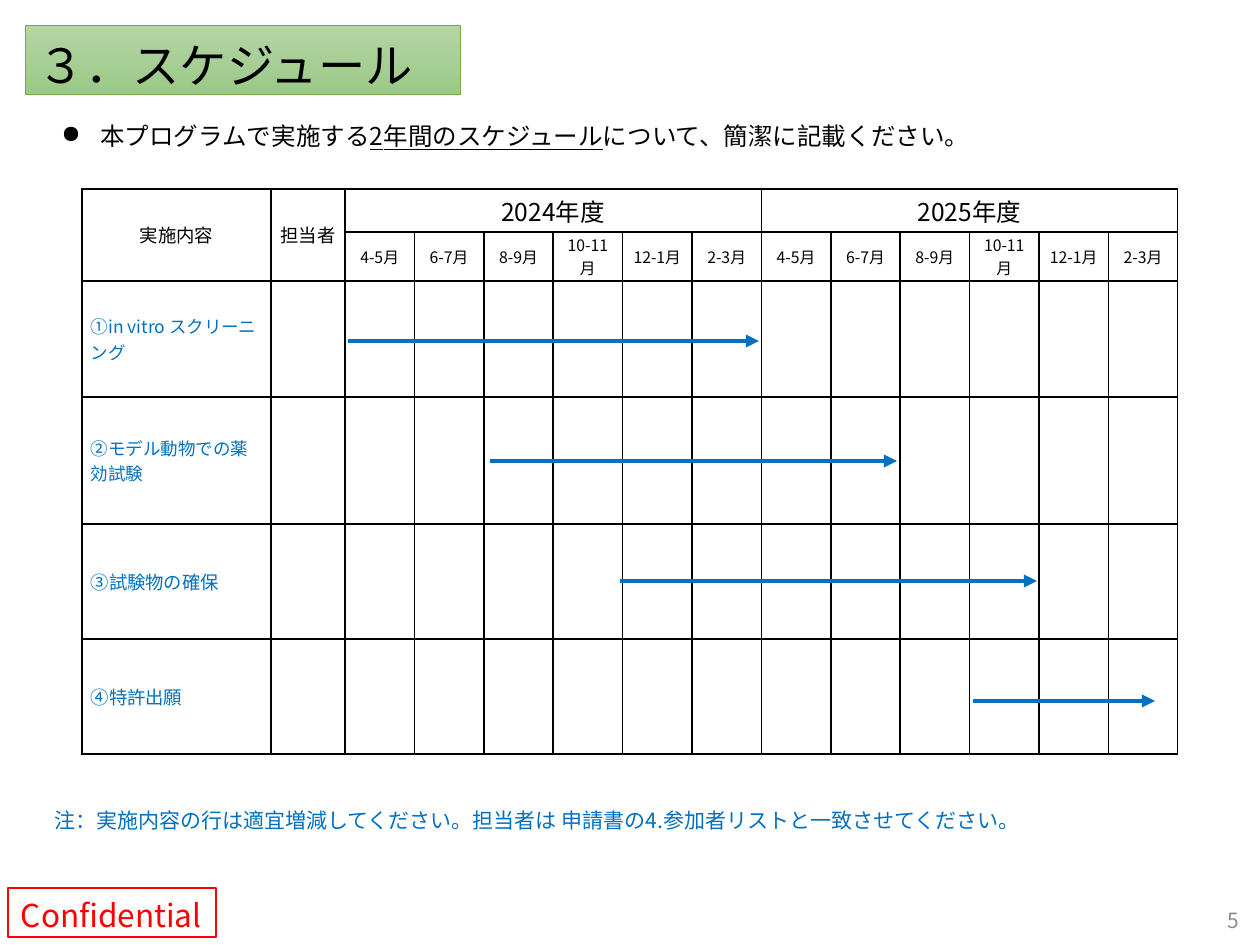
from lxml.etree import SubElement
from pptx import Presentation
from pptx.dml.color import RGBColor
from pptx.enum.shapes import MSO_CONNECTOR, MSO_SHAPE
from pptx.enum.text import MSO_ANCHOR as Anchor, PP_ALIGN as Align
from pptx.oxml.ns import qn
from pptx.util import Pt

PX = 914400 / 126
FONT = "Noto Sans CJK JP"
COLORS = {
    "ink": "000000", "plan": "0070C0", "alert": "FF0000", "page": "8C8C8C",
    "title_top": "B5D5A7", "title_bottom": "9CC987", "title_line": "70AD47",
}
MONTHS = ["4-5月", "6-7月", "8-9月", "10-11月", "12-1月", "2-3月"]
YEARS = ["2024年度", "2025年度"]
TASKS = [  # text, size, alignment, arrow start and end
    ("①in vitro スクリーニング", 10, Align.LEFT, 348, 759),
    ("②モデル動物での薬効試験", 10, Align.LEFT, 490, 897),
    ("③試験物の確保", 10.5, Align.JUSTIFY, 620, 1037),
    ("④特許出願", 10.5, Align.LEFT, 973, 1155),
]
TASK_COL, OWNER_COL, MONTHS_WIDTH = 189, 74, 833
ROW_HEIGHTS = [43, 49, 116, 127, 115, 115]
FIRST_ARROW_Y, ARROW_STEP = 341, 120


def px(n):
    return round(n * PX)


def box(*lengths):
    return [px(n) for n in lengths]


def rgb(name):
    return RGBColor.from_string(COLORS[name])


def style(paragraph, size, color="ink", align=Align.LEFT):
    paragraph.alignment = align
    font = paragraph.font
    font.size, font.name = Pt(size), FONT
    font.color.rgb = rgb(color)
    properties = paragraph._p.pPr.find(qn("a:defRPr"))
    SubElement(properties, qn("a:ea"), typeface=FONT)


def set_insets(holder, left, top, right, bottom):
    holder.margin_left, holder.margin_top = px(left), px(top)
    holder.margin_right, holder.margin_bottom = px(right), px(bottom)


def add_label(slide, place, text, size, line, line_width, top_inset, color="ink"):
    """Add an outlined one-line rectangle and return it for filling."""
    label = slide.shapes.add_shape(MSO_SHAPE.RECTANGLE, *box(*place))
    label.shadow.inherit = False
    label.fill.background()
    label.line.color.rgb = rgb(line)
    label.line.width = Pt(line_width)
    frame = label.text_frame
    frame.word_wrap = False
    frame.vertical_anchor = Anchor.MIDDLE
    set_insets(frame, 13, top_inset, 13, 5)
    frame.text = text
    style(frame.paragraphs[0], size, color)
    return label


def add_text(slide, place, parts, size, color="ink", align=Align.LEFT, anchor=Anchor.TOP):
    """Add a text box from (text, underlined) parts and return its paragraph."""
    frame = slide.shapes.add_textbox(*box(*place)).text_frame
    frame.word_wrap = True
    frame.vertical_anchor = anchor
    paragraph = frame.paragraphs[0]
    style(paragraph, size, color, align)
    for text, underlined in parts:
        run = paragraph.add_run()
        run.text = text
        if underlined:
            run.font.underline = True
    return paragraph


def add_bullet(paragraph, symbol, indent):
    properties = paragraph._p.pPr
    properties.set("marL", str(px(indent)))
    properties.set("indent", str(-px(indent)))
    bullet = properties.makeelement(qn("a:buChar"), {"char": symbol})
    properties.insert(0, bullet)


def border_cell(cell):
    properties = cell._tc.get_or_add_tcPr()
    for index, side in enumerate(("lnL", "lnR", "lnT", "lnB")):
        line = properties.makeelement(qn(f"a:{side}"), {"w": str(Pt(1))})
        fill = SubElement(line, qn("a:solidFill"))
        SubElement(fill, qn("a:srgbClr"), val=COLORS["ink"])
        properties.insert(index, line)


def fill_cell(cell, text, size, color="ink", align=Align.CENTER):
    cell.text = text
    style(cell.text_frame.paragraphs[0], size, color, align)


def add_schedule(slide):
    month_count = len(MONTHS) * len(YEARS)
    width = TASK_COL + OWNER_COL + MONTHS_WIDTH
    table = slide.shapes.add_table(
        len(ROW_HEIGHTS), 2 + month_count, *box(82, 189, width, sum(ROW_HEIGHTS))
    ).table
    table.first_row = table.horz_banding = False
    widths = [TASK_COL, OWNER_COL] + [MONTHS_WIDTH / month_count] * month_count
    for column, column_width in zip(table.columns, widths):
        column.width = px(column_width)
    for row, height in zip(table.rows, ROW_HEIGHTS):
        row.height = px(height)
    for cell in table.iter_cells():
        cell.fill.background()
        border_cell(cell)
        set_insets(cell, 9, 0, 9, 0)
        cell.vertical_anchor = Anchor.MIDDLE

    for col, heading in enumerate(["実施内容", "担当者"]):
        table.cell(0, col).merge(table.cell(1, col))
        fill_cell(table.cell(0, col), heading, 10.5)
    for index, year in enumerate(YEARS):
        first = 2 + index * len(MONTHS)
        table.cell(0, first).merge(table.cell(0, first + len(MONTHS) - 1))
        fill_cell(table.cell(0, first), year, 14)
        for col, month in enumerate(MONTHS, first):
            fill_cell(table.cell(1, col), month, 9)
    for row, (task, size, align, *_) in enumerate(TASKS, 2):
        fill_cell(table.cell(row, 0), task, size, "plan", align)


def add_period_arrow(slide, start, end, y):
    arrow = slide.shapes.add_connector(MSO_CONNECTOR.STRAIGHT, *box(start, y, end, y))
    arrow.line.color.rgb = rgb("plan")
    arrow.line.width = Pt(2.5)
    SubElement(arrow.line._get_or_add_ln(), qn("a:tailEnd"), type="triangle")
    SubElement(arrow._element.spPr, qn("a:effectLst"))


def main():
    deck = Presentation()
    deck.slide_width, deck.slide_height = box(1260, 945)
    slide = deck.slides.add_slide(deck.slide_layouts[6])

    add_label(slide, (8, 888, 208, 49), "Confidential", 18, "alert", 0.75, 10, "alert")
    title = add_label(slide, (25, 25, 436, 69), "３．スケジュール", 27, "title_line", 0.5, 15)
    title.fill.gradient()
    title.fill.gradient_angle = 270
    for stop, color in zip(title.fill.gradient_stops, ("title_top", "title_bottom")):
        stop.color.rgb = rgb(color)

    guidance = add_text(slide, (49, 115, 1188, 43), [
        ("本プログラムで実施する", False),
        ("2年間のスケジュール", True),
        ("について、簡潔に記載ください。", False),
    ], 14)
    add_bullet(guidance, "●", 39)

    add_schedule(slide)
    for index, (*_, start, end) in enumerate(TASKS):
        add_period_arrow(slide, start, end, FIRST_ARROW_Y + index * ARROW_STEP)

    note = "注：実施内容の行は適宜増減してください。担当者は 申請書の4.参加者リストと一致させてください。"
    add_text(slide, (42, 801, 1177, 38), [(note, False)], 12, "plan")
    add_text(slide, (1193, 903, 59, 35), [("5", False)], 12, "page",
             Align.RIGHT, Anchor.MIDDLE)
    deck.save("out.pptx")


if __name__ == "__main__":
    main()
